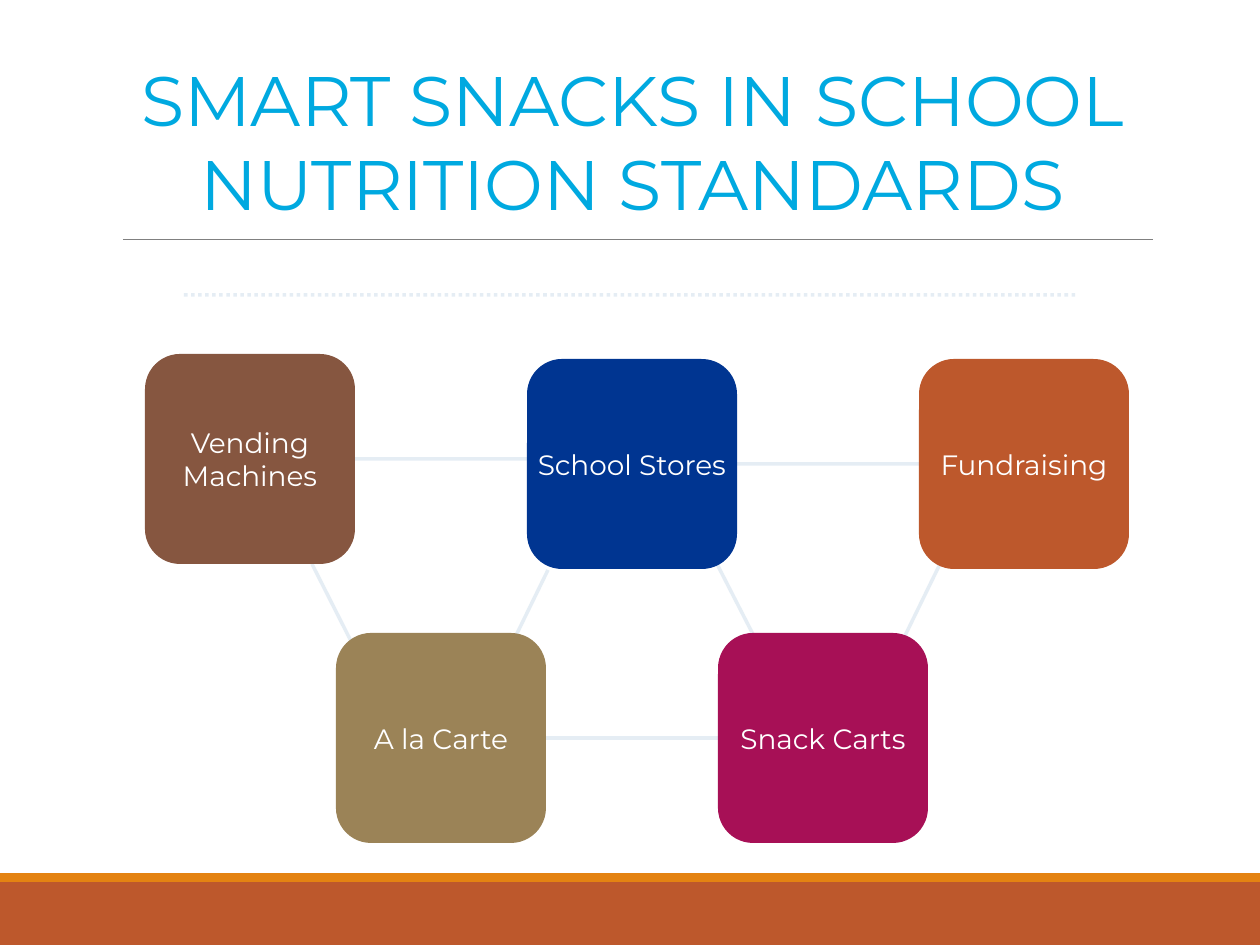
from dataclasses import dataclass
from lxml.etree import SubElement as Sub
from pptx import Presentation as Deck
from pptx.dml.color import RGBColor as Color
from pptx.enum.dml import MSO_LINE_DASH_STYLE as Dash
from pptx.enum.shapes import MSO_CONNECTOR as Conn, MSO_SHAPE as Shape
from pptx.enum.text import MSO_ANCHOR as Anchor, MSO_AUTO_SIZE as Fit, PP_ALIGN as Align
from pptx.oxml.ns import qn
from pptx.util import Pt

SCALE = 914400 / 126  # EMU per px


def emu(*sizes):
    return [round(size * SCALE) for size in sizes]


@dataclass
class Theme:
    font: str = "Montserrat"
    title: int = 40
    label: int = 16
    sky: str = "00A9E0"
    white: str = "FFFFFF"
    gray: str = "808080"
    mist: str = "CCDDEA"
    rust: str = "BD582C"
    amber: str = "E48312"
    brown: str = "865640"
    khaki: str = "9B8357"
    berry: str = "A71056"
    navy: str = "003591"


class Painter:
    def __init__(self, slide, theme):
        self.slide, self.theme = slide, theme

    def block(self, kind, box, fill):
        shape = self.slide.shapes.add_shape(kind, *emu(*box))
        shape.shadow.inherit = False
        shape.fill.solid()
        shape.fill.fore_color.rgb = Color.from_string(fill)
        shape.line.fill.background()
        return shape

    def label(self, frame, lines, size, color, form):
        for key, value in form.items():
            setattr(frame, key, value)
        for num, words in enumerate(lines):
            para = frame.add_paragraph() if num else frame.paragraphs[0]
            para.alignment = Align.CENTER
            run = para.add_run()
            run.text = words
            style = {"name": self.theme.font, "size": Pt(size)}
            for key, value in style.items():
                setattr(run.font, key, value)
            run.font.color.rgb = Color.from_string(color)

    def title(self, box, lines):
        area = self.slide.shapes.add_textbox(*emu(*box))
        form = {"word_wrap": False, "auto_size": Fit.SHAPE_TO_FIT_TEXT}
        self.label(area.text_frame, lines, self.theme.title, self.theme.sky, form)

    def tile(self, box, words, fill):
        shape = self.block(Shape.ROUNDED_RECTANGLE, box, fill)
        form = {f"margin_{side}": 0 for side in ("left", "top", "right", "bottom")}
        form |= {"word_wrap": True, "vertical_anchor": Anchor.MIDDLE}
        self.label(shape.text_frame, [words], self.theme.label, self.theme.white, form)

    def line(self, ends, color, width, dash=Dash.SOLID, alpha=100):
        link = self.slide.shapes.add_connector(Conn.STRAIGHT, *emu(*ends))
        link.line.color.rgb = Color.from_string(color)
        link.line.width = Pt(width)
        link.line.dash_style = dash
        props = link.element.spPr
        if alpha < 100:
            tone = props.find(".//" + qn("a:srgbClr"))
            Sub(tone, qn("a:alpha")).set("val", str(alpha * 1000))
        Sub(props, qn("a:effectLst"))


def main():
    deck = Deck()
    deck.slide_width, deck.slide_height = emu(1260, 945)
    theme = Theme()
    pen = Painter(deck.slides.add_slide(deck.slide_layouts[6]), theme)

    # Footer bands and title rule
    pen.block(Shape.RECTANGLE, (0, 882, 1260, 63), theme.rust)
    pen.block(Shape.RECTANGLE, (0, 873, 1260, 9), theme.amber)
    pen.line((123, 239, 1153, 239), theme.gray, 0.5)

    # Title and dotted rule
    pen.title((73, 50, 1119, 183), ["SMART SNACKS IN SCHOOL", "NUTRITION STANDARDS"])
    pen.line((184, 295, 1077, 295), theme.mist, 2, Dash.ROUND_DOT, 50)

    # Links, drawn behind the tiles
    links = [
        (312, 564, 355, 649),
        (716, 562, 759, 646),
        (941, 562, 900, 646),
        (548, 570, 507, 654),
        (737, 738, 546, 738),
        (919, 464, 728, 464),
        (533, 459, 341, 459),
    ]
    for ends in links:
        pen.line(ends, theme.mist, 2, alpha=50)

    # Snack venues
    side = 210
    venues = [
        (145, 354, "Vending Machines", theme.brown),
        (336, 633, "A la Carte", theme.khaki),
        (718, 633, "Snack Carts", theme.berry),
        (527, 359, "School Stores", theme.navy),
        (919, 359, "Fundraising", theme.rust),
    ]
    for left, top, words, fill in venues:
        pen.tile((left, top, side, side), words, fill)

    deck.save("out.pptx")


if __name__ == "__main__":
    main()
